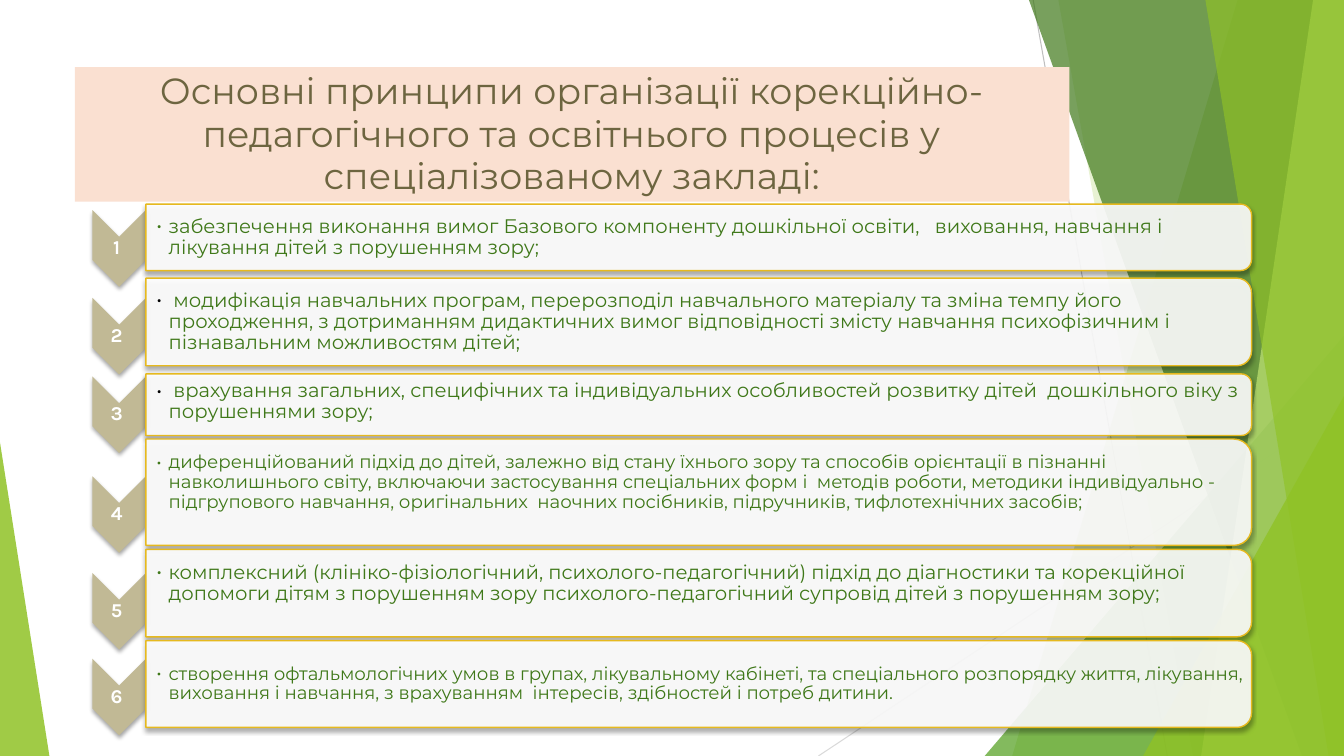
from lxml import etree
from pptx import Presentation
from pptx import util as u
from pptx.dml.color import RGBColor
from pptx.enum import shapes, text
from pptx.oxml import ns

# ---- Content ----
TITLE = ("Основні принципи організації корекційно-педагогічного та освітнього "
         "процесів у спеціалізованому закладі:")

# Chevron top, panel top, panel height, text shift, text size, black bullet, text
PRINCIPLES = [
    (150.1, 145.8, 47.5, 0, 14, False,
     "забезпечення виконання вимог Базового компоненту дошкільної освіти,   "
     "виховання, навчання і лікування дітей з порушенням зору;"),
    (212.8, 198.7, 62.6, 0, 14, True,
     "модифікація навчальних програм, перерозподіл навчального матеріалу та зміна "
     "темпу його проходження, з дотриманням дидактичних вимог відповідності змісту "
     "навчання психофізичним і пізнавальним можливостям дітей;"),
    (268.9, 267.1, 44, -2, 14, True,
     "врахування загальних, специфічних та індивідуальних особливостей розвитку "
     "дітей  дошкільного віку з порушеннями зору;"),
    (340.2, 313.6, 76, -7, 13, False,
     "диференційований підхід до дітей, залежно від стану їхнього зору та способів "
     "орієнтації в пізнанні навколишнього світу, включаючи застосування спеціальних "
     "форм і  методів роботи, методики індивідуально - підгрупового навчання, "
     "оригінальних  наочних посібників, підручників, тифлотехнічних засобів;"),
    (409.3, 392.4, 62.5, -7, 14, False,
     "комплексний (клініко-фізіологічний, психолого-педагогічний) підхід до "
     "діагностики та корекційної допомоги дітям з порушенням зору "
     "психолого-педагогічний супровід дітей з порушенням зору;"),
    (470.5, 457.6, 62, 0, 13, False,
     "створення офтальмологічних умов в групах, лікувальному кабінеті, та "
     "спеціального розпорядку життя, лікування, виховання і навчання, з врахуванням  "
     "інтересів, здібностей і потреб дитини."),
]

# ---- Background, back to front ----
WIDTH, HEIGHT = 960, 540
THIN_LINES = [((738, 0), (833.8, HEIGHT), "BFBFBF"),
              ((WIDTH, 290.2), (584.6, HEIGHT), "D9D9D9")]
# Bands reach the right edge: top x, bottom x, colour, opacity
# Triangles: left, top, width, height, apex position, colour, opacity
FACETS = [
    (884.2, 722.9, "90C226", 30),
    (756, 851.8, "90C226", 20),
    (703.4, 239.8, 256.6, 300.2, 1, "54A021", 72),
    (735.1, 929.5, "3F7819", 70),
    (938.2, 858.2, "C0E474", 70),
    (861.1, 949, "90C226", 65),
    (816.5, 283, 143.5, 257, 1, "90C226", 80),
    (0, 316.1, 35.3, 223.9, 0, "90C226", 85),
]

TITLE_AREA = (53.4, 48, 710.4, 96)
CHEVRON_LEFT, CHEVRON_WIDTH, CHEVRON_HEIGHT = 66, 38.2, 54.7
PANEL_LEFT, PANEL_WIDTH = 104.2, 789.8
TEXT_WIDTH, BULLET_INDENT = 786.4, 8.8

presentation = Presentation()
presentation.slide_width, presentation.slide_height = u.Pt(WIDTH), u.Pt(HEIGHT)
slide = presentation.slides.add_slide(presentation.slide_layouts[5])


def color(value):
    return RGBColor.from_string(value)


def add_xml(parent, tag, **attributes):
    child = etree.SubElement(parent, ns.qn(tag))
    for name, value in attributes.items():
        child.set(name, str(value))
    return child


def paint(shape, fill, opacity=100, line=None, shadow=False):
    shape.shadow.inherit = False
    shape.fill.solid()
    shape.fill.fore_color.rgb = color(fill)
    properties = shape._element.spPr
    if opacity < 100:
        fill_color = properties.find(ns.qn("a:solidFill"))[0]
        add_xml(fill_color, "a:alpha", val=opacity * 1000)
    if line:
        shape.line.color.rgb = color(line)
        shape.line.width = u.Pt(1)
    else:
        shape.line.fill.background()
    if shadow:
        effects = properties.find(ns.qn("a:effectLst"))
        outer = add_xml(effects, "a:outerShdw", blurRad=u.Pt(3), dist=u.Pt(2),
                        dir=90 * 60000, algn="ctr", rotWithShape=0)
        add_xml(add_xml(outer, "a:srgbClr", val="000000"), "a:alpha", val=35000)


def add_turned(kind, left, top, width, height, **style):
    """Shape turned 90 degrees that covers the given area."""
    shape = slide.shapes.add_shape(
        kind, u.Pt(left + (width - height) / 2), u.Pt(top + (height - width) / 2),
        u.Pt(height), u.Pt(width))
    shape.rotation = 90
    paint(shape, shadow=True, **style)


def set_margins(frame, left=0.7, right=0.7, vertical=0.7):
    frame.margin_left, frame.margin_right = u.Pt(left), u.Pt(right)
    frame.margin_top = frame.margin_bottom = u.Pt(vertical)


def write(paragraph, words, font="Montserrat", size=14, fill="3F7819", bold=False):
    run = paragraph.add_run()
    run.text = words
    run.font.name, run.font.size, run.font.bold = font, u.Pt(size), bold
    run.font.color.rgb = color(fill)


def add_text_box(left, top, width, height, inset=0.7):
    box = slide.shapes.add_textbox(u.Pt(left), u.Pt(top), u.Pt(width), u.Pt(height))
    frame = box.text_frame
    frame.word_wrap = True
    frame.vertical_anchor = text.MSO_ANCHOR.MIDDLE
    set_margins(frame, left=inset)
    paragraph = frame.paragraphs[0]
    paragraph.line_spacing = 0.9
    return paragraph


# ---- Background ----
for start, end, line_color in THIN_LINES:
    line = slide.shapes.add_connector(shapes.MSO_CONNECTOR.STRAIGHT,
                                      *map(u.Pt, start + end))
    line.line.color.rgb = color(line_color)
    line.line.width = u.Pt(0.75)
    add_xml(line._element.spPr, "a:effectLst")

for *geometry, fill, opacity in FACETS:
    if len(geometry) == 2:
        top_x, bottom_x = geometry
        builder = slide.shapes.build_freeform(top_x, 0, scale=u.Pt(1))
        builder.add_line_segments([(WIDTH, 0), (WIDTH, HEIGHT), (bottom_x, HEIGHT)])
        facet = builder.convert_to_shape()
    else:
        *area, apex = geometry
        facet = slide.shapes.add_shape(shapes.MSO_SHAPE.ISOSCELES_TRIANGLE,
                                       *map(u.Pt, area))
        facet.adjustments[0] = apex
    paint(facet, fill, opacity)

# ---- Title, in front of the background and clear of the first panel ----
title = slide.shapes.title
slide.shapes._spTree.append(title._element)
title.left, title.top, title.width, title.height = map(u.Pt, TITLE_AREA)
title.fill.solid()
title.fill.fore_color.rgb = color("FAE0D1")
title_frame = title.text_frame
title_frame.word_wrap = True
title_frame.auto_size = text.MSO_AUTO_SIZE.NONE
title_frame.vertical_anchor = text.MSO_ANCHOR.MIDDLE
set_margins(title_frame, left=7.2, right=7.2, vertical=0)
title_paragraph = title_frame.paragraphs[0]
title_paragraph.alignment = text.PP_ALIGN.CENTER
title_paragraph.line_spacing = 0.98
write(title_paragraph, TITLE, size=26, fill="6D6540")

# ---- Numbered principles ----
for number, principle in enumerate(PRINCIPLES, 1):
    chevron_top, panel_top, panel_height, shift, size, black_bullet, words = principle
    add_turned(shapes.MSO_SHAPE.CHEVRON, CHEVRON_LEFT, chevron_top,
               CHEVRON_WIDTH, CHEVRON_HEIGHT, fill="C1B995")
    label = add_text_box(CHEVRON_LEFT, chevron_top + 19, CHEVRON_WIDTH, 16.6)
    label.alignment = text.PP_ALIGN.CENTER
    write(label, f"{number} ", font="Karla", fill="FFFFFF", bold=True)

    add_turned(shapes.MSO_SHAPE.ROUND_2_SAME_RECTANGLE, PANEL_LEFT, panel_top,
               PANEL_WIDTH, panel_height, fill="FFFFFF", opacity=90, line="E6B91E")
    item = add_text_box(PANEL_LEFT, panel_top + shift, TEXT_WIDTH, panel_height,
                        inset=7.5)
    item_properties = item._p.get_or_add_pPr()
    item_properties.set("marL", str(u.Pt(BULLET_INDENT)))
    item_properties.set("indent", str(-u.Pt(BULLET_INDENT)))
    add_xml(item_properties, "a:buFont", typeface="Montserrat")
    add_xml(item_properties, "a:buChar", char="•")
    if black_bullet:
        write(item, " ", font="Karla", fill="000000")
    write(item, words, size=size)

presentation.save("out.pptx")
